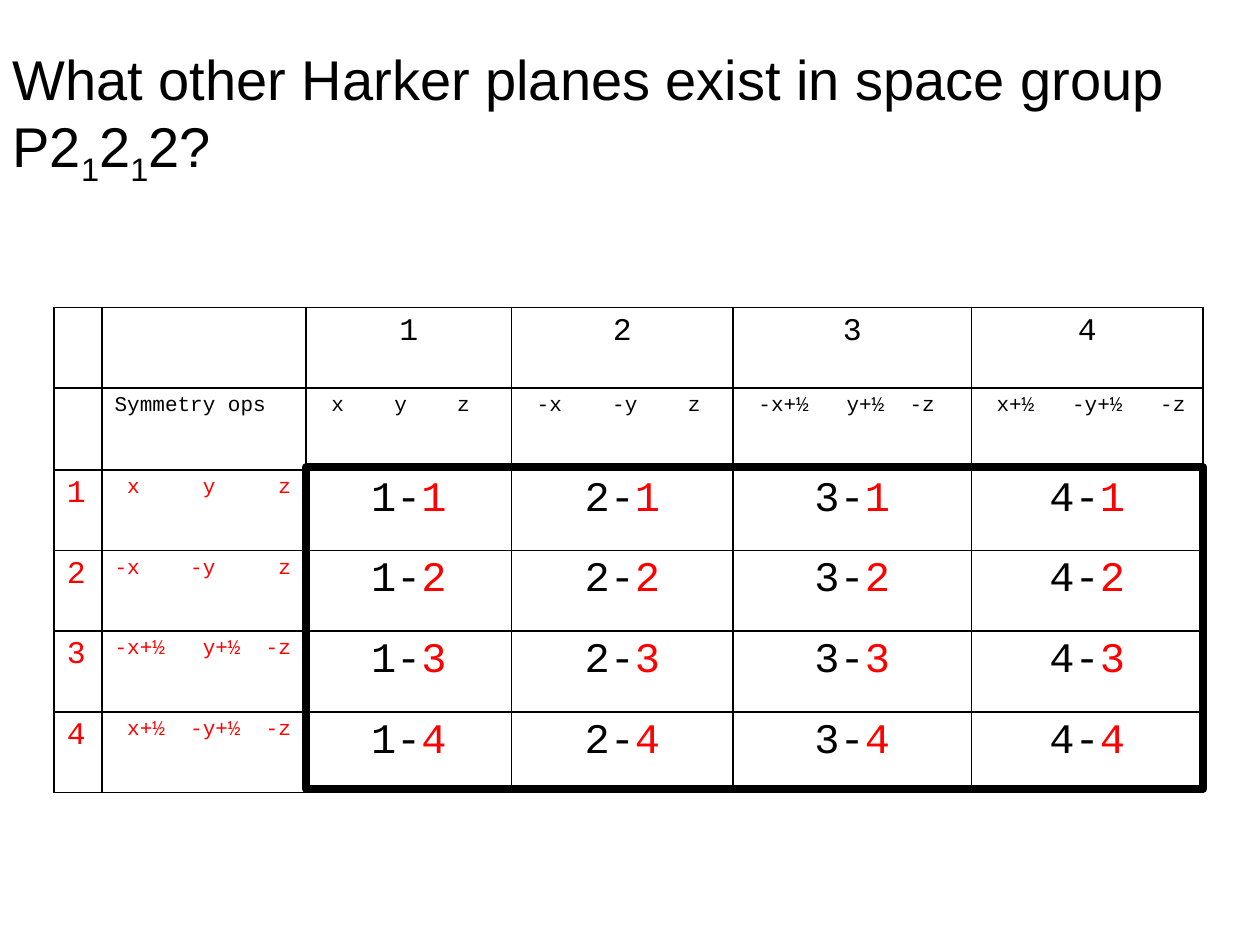
from lxml import etree
from pptx import Presentation
from pptx.dml.color import RGBColor
from pptx.enum.shapes import MSO_SHAPE
from pptx.enum.text import MSO_ANCHOR, MSO_AUTO_SIZE, PP_ALIGN
from pptx.oxml.ns import qn
from pptx.util import Inches, Pt

LEFT, CENTER = PP_ALIGN.LEFT, PP_ALIGN.CENTER
MIDDLE = MSO_ANCHOR.MIDDLE
NO_AUTOFIT = MSO_AUTO_SIZE.NONE
RECTANGLE = MSO_SHAPE.RECTANGLE
BLACK, RED, WHITE = "000000", "FF0000", "FFFFFF"


def color(hex_text):
    return RGBColor.from_string(hex_text)


def add_run(para, text, font, size, hex_text):
    span = para.add_run()
    span.text = text
    span.font.name = font
    span.font.size = Pt(size)
    span.font.color.rgb = color(hex_text)
    return span


deck = Presentation()
deck.slide_width, deck.slide_height = Inches(10), Inches(7.5)
page = deck.slides.add_slide(deck.slide_layouts[5])

# Title with subscripted screw axes
title = page.shapes.title
title.left, title.top = Inches(0), Inches(0.3)
title.width, title.height = Inches(10), Inches(1.25)
frame = title.text_frame
frame.word_wrap = True
frame.auto_size = NO_AUTOFIT
frame.vertical_anchor = MIDDLE
para = frame.paragraphs[0]
para.alignment = LEFT
title_parts = ["What other Harker planes exist in space group P2", "1", "2", "1", "2?"]
for index, part in enumerate(title_parts):
    span = add_run(para, part, "Arial", 32, BLACK)
    if index % 2:
        span.font._element.set("baseline", "-25000")

# Cell contents: each cell is (alignment, size, [(text, colour), ...])
column_operators = [" x    y    z", " -x    -y    z", " -x+½   y+½  -z", " x+½   -y+½   -z"]
row_operators = [" x     y     z", "-x    -y     z", "-x+½   y+½  -z", " x+½  -y+½  -z"]
numbers = "1234"
empty = (LEFT, 18, [])
rows = [
    [empty, empty] + [(CENTER, 18, [(number, BLACK)]) for number in numbers],
    [empty] + [(LEFT, 12, [(text, BLACK)]) for text in ["Symmetry ops"] + column_operators],
]
for number, operator in zip(numbers, row_operators):
    heads = [(LEFT, 18, [(number, RED)]), (LEFT, 12, [(operator, RED)])]
    pairs = [(CENTER, 24, [(other + "-", BLACK), (number, RED)]) for other in numbers]
    rows.append(heads + pairs)

# Table of symmetry operator differences
column_widths = [0.38, 1.62, 1.63, 1.76, 1.89, 1.84]
row_heights = [0.64, 0.65] + [0.64] * 4
table = page.shapes.add_table(
    len(rows), len(column_widths), Inches(0.43), Inches(2.44),
    Inches(sum(column_widths)), Inches(sum(row_heights))).table
table.first_row = table.horz_banding = False
for column, width in zip(table.columns, column_widths):
    column.width = Inches(width)
for row, height in zip(table.rows, row_heights):
    row.height = Inches(height)

for row, contents in zip(table.rows, rows):
    for cell, (alignment, size, spans) in zip(row.cells, contents):
        para = cell.text_frame.paragraphs[0]
        para.alignment = alignment
        for text, hex_text in spans:
            add_run(para, text, "Courier New", size, hex_text)
        # Borders come before the fill in the cell properties
        properties = cell._tc.get_or_add_tcPr()
        for side in ("a:lnL", "a:lnR", "a:lnT", "a:lnB"):
            border = etree.SubElement(properties, qn(side), w=str(Pt(1)))
            fill = etree.SubElement(border, qn("a:solidFill"))
            etree.SubElement(fill, qn("a:srgbClr"), val=BLACK)
        cell.fill.solid()
        cell.fill.fore_color.rgb = color(WHITE)

# Heavy frame around the sixteen differences
outline = page.shapes.add_shape(
    RECTANGLE, Inches(2.43), Inches(3.71), Inches(7.12), Inches(2.55))
outline.shadow.inherit = False
outline.fill.background()
outline.line.color.rgb = color(BLACK)
outline.line.width = Pt(4.5)
etree.SubElement(outline.line._get_or_add_ln(), qn("a:round"))

deck.save("out.pptx")
